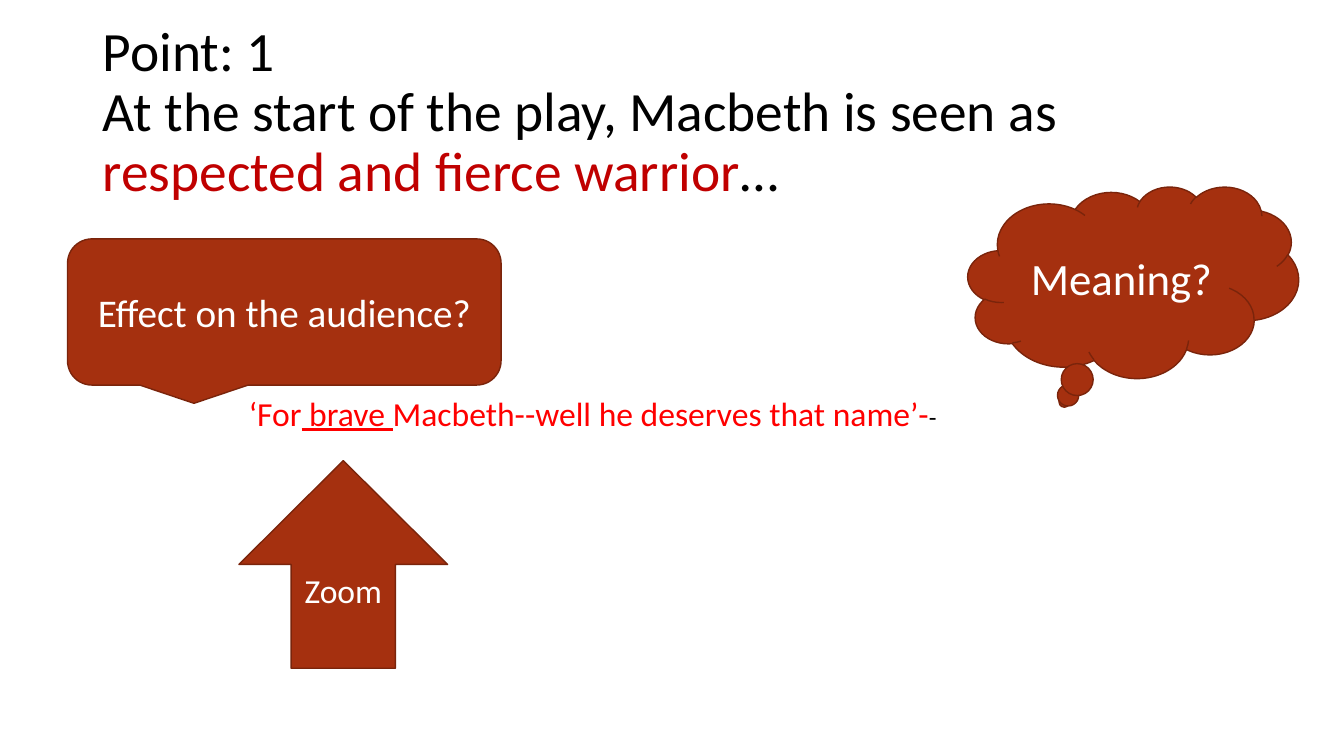
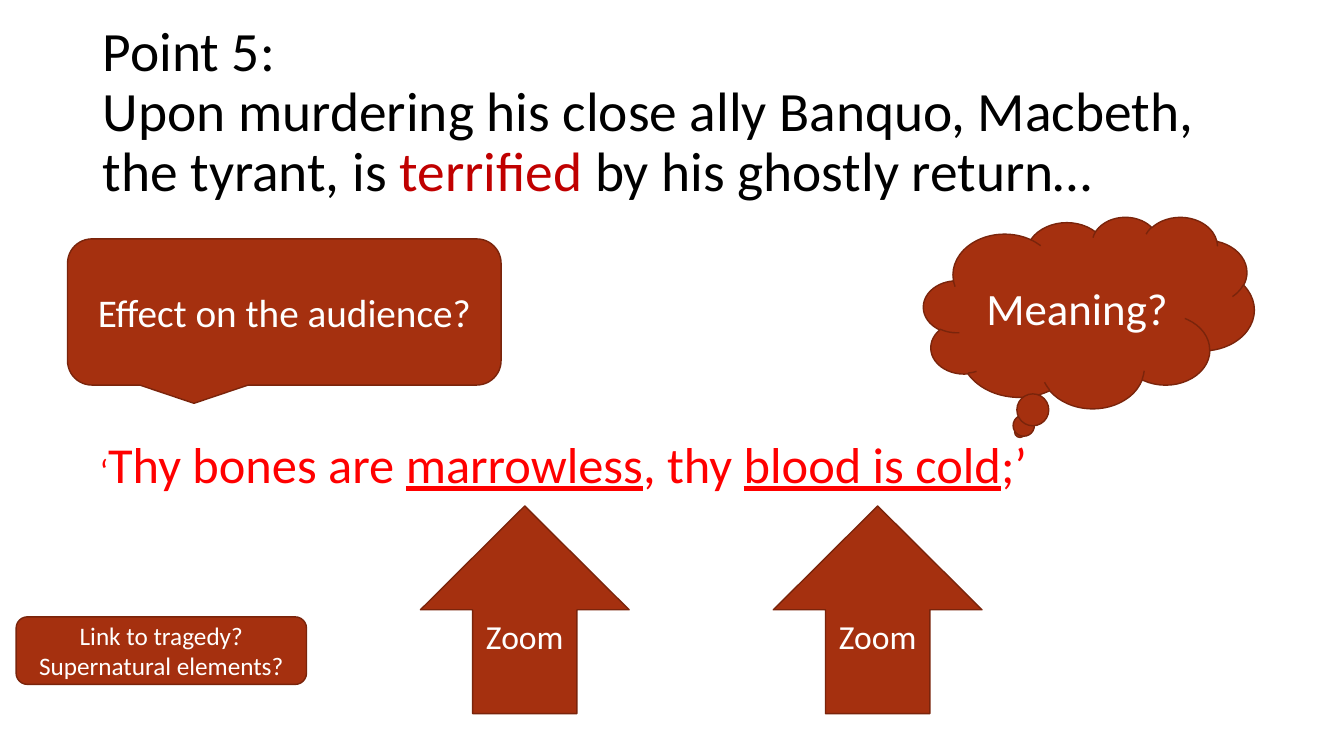
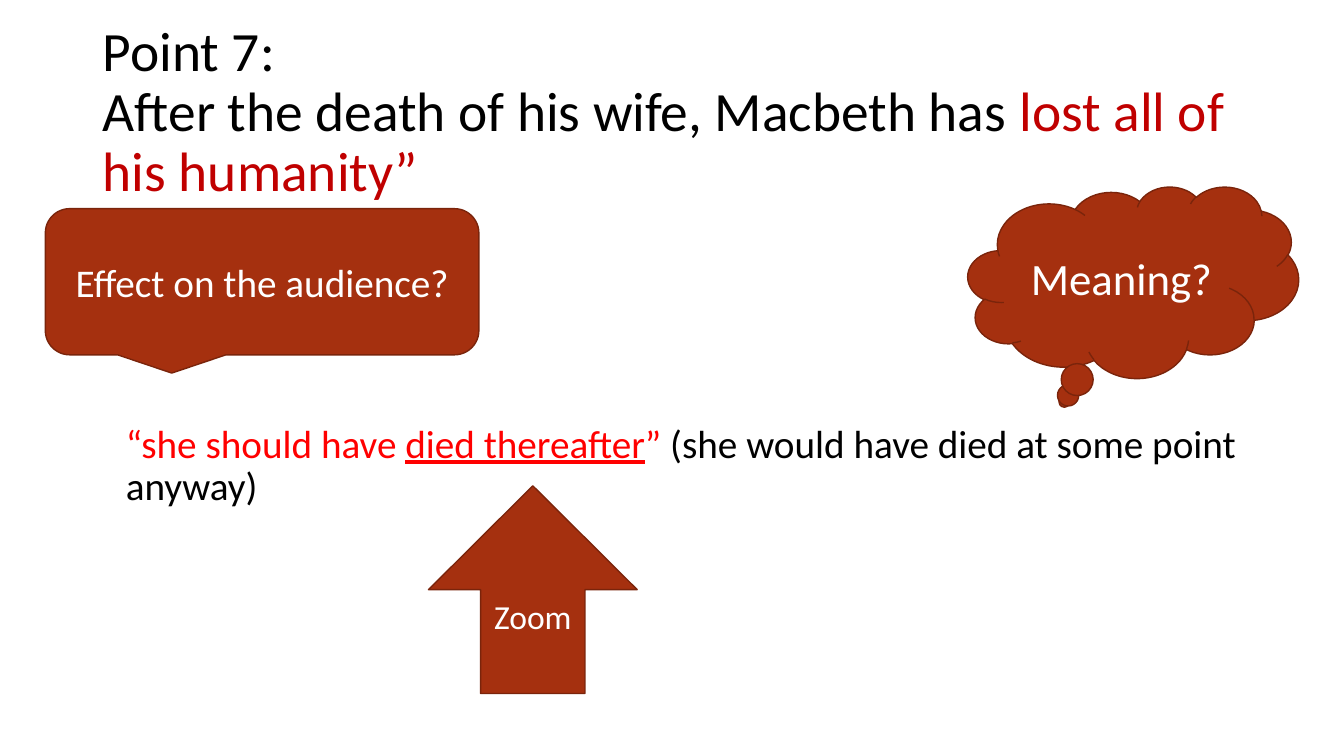
"""Three Macbeth revision slides: a point, a quotation and prompts around it."""
from pptx import Presentation
from pptx import util as u
from pptx.dml.color import RGBColor
from pptx.enum import shapes, text

FONT = "Calibri"
BLACK, WHITE, KEY, QUOTE = "000000", "FFFFFF", "C00000", "FF0000"
FILL, EDGE = "A5300F", "7A240B"
TITLE_BOX = (0.92, 0.4, 11.5, 1.45)
TITLE_SIZE = 39.6

G = shapes.MSO_SHAPE
PROMPTS = {
    "meaning": (G.CLOUD_CALLOUT, "Meaning?", 32, 3.28, 1.9),
    "zoom": (G.UP_ARROW, "Zoom", 24, 2.07, 2.06),
    "effect": (G.ROUNDED_RECTANGULAR_CALLOUT, "Effect on the audience?", 28, 4.3, 1.45),
    "link": (G.FLOWCHART_ALTERNATE_PROCESS, "Link to tragedy? Supernatural elements?", 18, 2.88, 0.67),
}

SLIDES = [
    {
        "title": [("Point: 1\vAt the start of the play, Macbeth is seen as ", {}),
                  ("respected and fierce warrior", {"color": KEY}), ("…", {})],
        "quote": [("‘For", {}), (" brave ", {"underline": True}),
                  ("Macbeth--well he deserves that name’-", {}),
                  ("-", {"size": 18, "color": BLACK})],
        "size": 24, "box": (2.37, 3.89, 11.5, 3.41),
        "prompts": [("meaning", 9.6, 1.85), ("zoom", 2.37, 4.57), ("effect", 0.67, 2.37)],
    },
    {
        "title": [("Point 5:\vUpon murdering his close ally Banquo, Macbeth, the tyrant, is ", {}),
                  ("terrified", {"color": KEY}), (" by his ghostly return…", {})],
        "quote": [("‘", {"size": 24}), ("Thy bones are ", {}),
                  ("marrowless", {"underline": True}), (", thy ", {}),
                  ("blood is cold", {"underline": True}), (";’", {})],
        "size": 36, "box": (0.96, 3.89, 11.5, 1.06), "table": True,
        "prompts": [("meaning", 9.16, 2.15), ("zoom", 4.17, 5.02), ("zoom", 7.67, 5.02),
                    ("effect", 0.67, 2.37), ("link", 0.16, 6.12)],
    },
    {
        "title": [("Point 7:\vAfter the death of his wife, Macbeth has ", {}),
                  ("lost all of his humanity”", {"color": KEY})],
        "quote": [("“she should have ", {}), ("died thereafter", {"underline": True}), ("” ", {}),
                  ("(she would have died at some point anyway)", {"color": BLACK})],
        "size": 28, "box": (1.15, 4.16, 11.5, 3.36),
        "prompts": [("meaning", 9.6, 1.85), ("zoom", 4.25, 4.82), ("effect", 0.45, 2.07)],
    },
]


def rgb(value):
    return RGBColor.from_string(value)


def inches(values):
    return [u.Inches(v) for v in values]


def write(tf, runs, size, color, align=text.PP_ALIGN.LEFT, anchor=text.MSO_ANCHOR.TOP, spacing=None):
    tf.word_wrap = True
    tf.vertical_anchor = anchor
    p = tf.paragraphs[0]
    p.alignment = align
    p.line_spacing = spacing
    for words, style in runs:
        for i, line in enumerate(words.split("\v")):
            if i:
                p.add_line_break()
            r = p.add_run()
            r.text = line
            r.font.name = FONT
            r.font.size = u.Pt(style.get("size", size))
            r.font.color.rgb = rgb(style.get("color", color))
            r.font.underline = style.get("underline")


def add_title(s, runs):
    sp = s.shapes.title
    sp.left, sp.top, sp.width, sp.height = inches(TITLE_BOX)
    sp.text_frame.auto_size = text.MSO_AUTO_SIZE.NONE
    write(sp.text_frame, runs, TITLE_SIZE, BLACK, anchor=text.MSO_ANCHOR.MIDDLE, spacing=0.9)


def add_quote(s, runs, size, box):
    sp = s.shapes.add_textbox(*inches(box))
    write(sp.text_frame, runs, size, QUOTE, spacing=0.9)


def add_quote_table(s, runs, size, box):
    table = s.shapes.add_table(1, 1, *inches(box)).table
    table.first_row = table.horz_banding = False
    cell = table.cell(0, 0)
    cell.fill.background()
    cell.margin_left = cell.margin_right = cell.margin_bottom = u.Inches(0.03)
    cell.margin_top = u.Inches(0.43)
    write(cell.text_frame, runs, size, QUOTE)


def add_prompt(s, kind, left, top):
    preset, words, size, width, height = PROMPTS[kind]
    sp = s.shapes.add_shape(preset, *inches((left, top, width, height)))
    sp.shadow.inherit = False
    sp.fill.solid()
    sp.fill.fore_color.rgb = rgb(FILL)
    sp.line.color.rgb = rgb(EDGE)
    sp.line.width = u.Pt(1)
    write(sp.text_frame, [(words, {})], size, WHITE, text.PP_ALIGN.CENTER, text.MSO_ANCHOR.MIDDLE)


def main():
    prs = Presentation()
    prs.slide_width, prs.slide_height = inches((13.33, 7.5))
    for content in SLIDES:
        s = prs.slides.add_slide(prs.slide_layouts[5])
        add_title(s, content["title"])
        place_quote = add_quote_table if content.get("table") else add_quote
        place_quote(s, content["quote"], content["size"], content["box"])
        for prompt in content["prompts"]:
            add_prompt(s, *prompt)
    prs.save("out.pptx")


if __name__ == "__main__":
    main()
